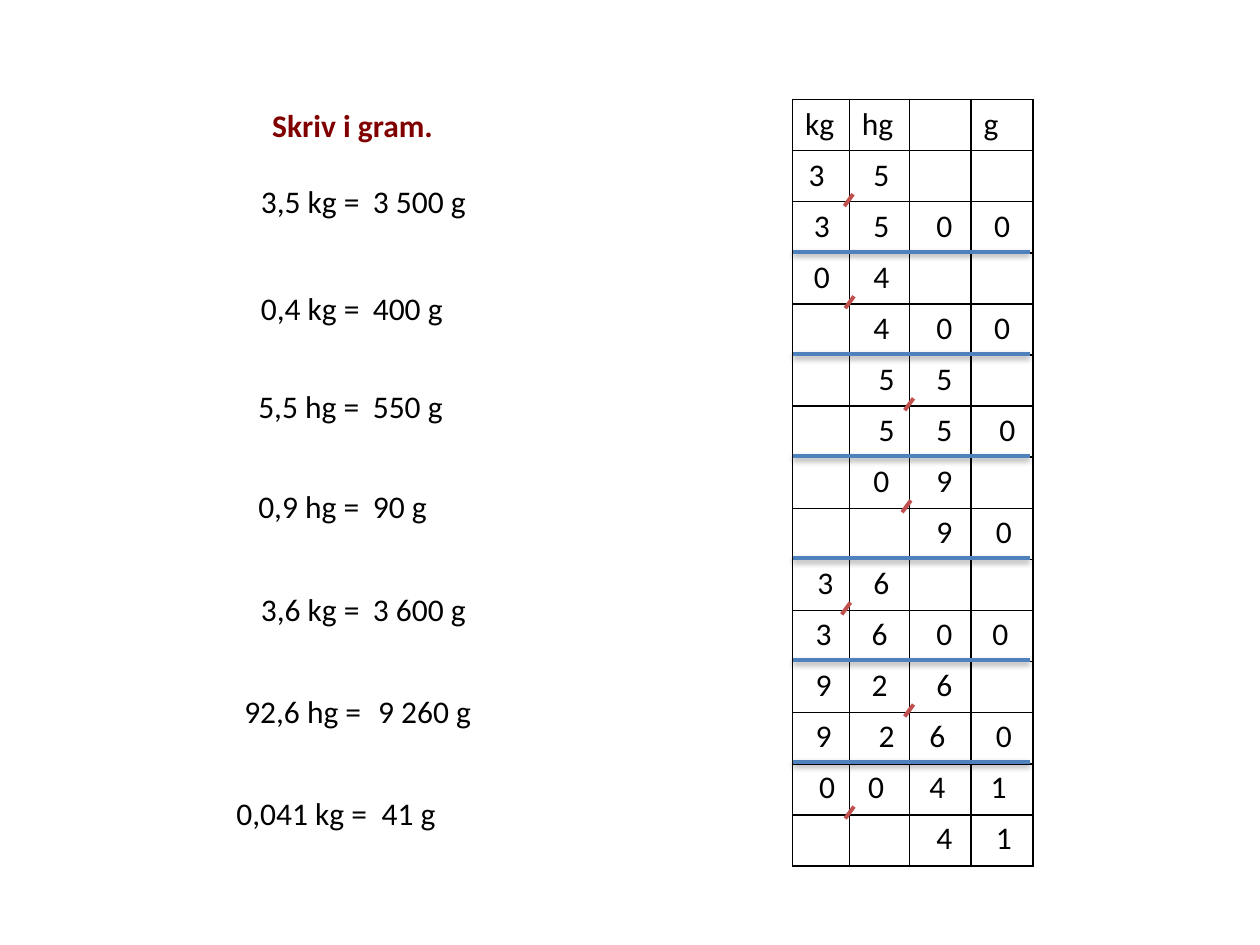
from dataclasses import dataclass

from lxml.etree import SubElement
from pptx import Presentation
from pptx.dml.color import RGBColor
from pptx.enum.shapes import MSO_CONNECTOR
from pptx.enum.text import MSO_AUTO_SIZE
from pptx.oxml import parse_xml
from pptx.oxml.ns import nsdecls, qn
from pptx.slide import Slide
from pptx.util import Pt

BLACK = RGBColor(0x00, 0x00, 0x00)
WHITE = RGBColor(0xFF, 0xFF, 0xFF)
MAROON = RGBColor(0x80, 0x00, 0x00)
BLUE = RGBColor(0x4F, 0x81, 0xBD)
RED = RGBColor(0xC0, 0x50, 0x4D)

LEFT, TOP, ROW = 452.9, 56.9, 29.16
COLS = [32.4, 34.3, 35.3, 35.3]
HEADER = ["kg", "hg", "", "g"]

TASKS = [
    (100.2, "3,5 kg =", 142, 71, 206, "3 500 g", 68),
    (161.5, "0,4 kg =", 142, 71, 206, "400 g", 55),
    (217.5, "5,5 hg =", 140.5, 73, 206, "550 g", 55),
    (274.5, "0,9 hg =", 140.5, 73, 206, "90 g", 45),
    (333.5, "3,6 kg =", 142, 73, 206, "3 600 g", 68),
    (391.8, "92,6 hg =", 132.5, 82, 209, "9 260 g", 68),
    (450.2, "0,041 kg =", 128, 90, 211, "41 g", 45),
]
DIGITS = [
    ("35", [455, 492]),
    ("3500", [458, 492, 528, 561]),
    ("04", [458, 492]),
    ("400", [492, 528, 561]),
    ("55", [495, 528]),
    ("550", [495, 528, 564]),
    ("09", [492, 528]),
    ("90", [528, 562]),
    ("36", [460, 492]),
    ("3600", [459, 491, 528, 560]),
    ("926", [459, 491, 528]),
    ("9260", [459, 495, 524, 562]),
    ("0041", [461, 489, 524, 559]),
    ("41", [528, 562]),
]
COMMAS = [487.5, 488, 522, 520.5, 486, 522, 488]


@dataclass
class Sheet:
    """Draws worksheet elements on one slide in a shared text style."""
    s: Slide
    font: str = "Calibri"
    size: float = 18

    def style(self, p, text, color=BLACK, bold=False):
        r = p.add_run()
        r.text = text
        fmt = {"name": self.font, "size": Pt(self.size), "bold": bold}
        for key, value in fmt.items():
            setattr(r.font, key, value)
        r.font.color.rgb = color

    def text(self, x, y, w, text, wrap=False, **look):
        sp = self.s.shapes.add_textbox(Pt(x), Pt(y), Pt(w), Pt(29.1))
        tf = sp.text_frame
        fmt = {"word_wrap": wrap, "auto_size": MSO_AUTO_SIZE.SHAPE_TO_FIT_TEXT}
        for key, value in fmt.items():
            setattr(tf, key, value)
        self.style(tf.paragraphs[0], text, **look)

    def line(self, x1, y1, x2, y2, color, width, shadow=False):
        ends = [Pt(v) for v in (x1, y1, x2, y2)]
        ln = self.s.shapes.add_connector(MSO_CONNECTOR.STRAIGHT, *ends)
        ln.line.color.rgb = color
        ln.line.width = Pt(width)
        effects = SubElement(ln._element.spPr, qn("a:effectLst"))
        if shadow:
            effects.append(parse_xml(
                f'<a:outerShdw {nsdecls("a")} blurRad="40000" dist="20000" '
                'dir="5400000" rotWithShape="0"><a:srgbClr val="000000">'
                '<a:alpha val="38000"/></a:srgbClr></a:outerShdw>'))

    def border(self, cell):
        tc_pr = cell._tc.get_or_add_tcPr()
        for side in ("lnL", "lnR", "lnT", "lnB"):
            tc_pr.append(parse_xml(
                f'<a:{side} {nsdecls("a")} w="12700"><a:solidFill>'
                f'<a:srgbClr val="{BLACK}"/></a:solidFill></a:{side}>'))

    def table(self, x, y, cols, rows, height, header):
        frame = self.s.shapes.add_table(rows, len(cols), Pt(x), Pt(y),
                                        Pt(sum(cols)), Pt(rows * height))
        tbl = frame.table
        for flag in ("first_row", "horz_banding"):
            setattr(tbl, flag, False)
        for col, width in zip(tbl.columns, cols):
            col.width = Pt(width)
        for row in tbl.rows:
            row.height = Pt(height)
        for cell in tbl.iter_cells():
            self.border(cell)
            cell.fill.solid()
            cell.fill.fore_color.rgb = WHITE
        for cell, label in zip(tbl.rows[0].cells, header):
            if label:
                self.style(cell.text_frame.paragraphs[0], label)


def main():
    prs = Presentation()
    prs.slide_width, prs.slide_height = Pt(720), Pt(540)
    sheet = Sheet(prs.slides.add_slide(prs.slide_layouts[6]))

    sheet.table(LEFT, TOP, COLS, len(DIGITS) + 1, ROW, HEADER)
    for i in range(1, len(COMMAS)):
        y = TOP + ROW * (2 * i + 1) - 0.4
        sheet.line(LEFT, y, LEFT + 135.5, y, BLUE, 2, shadow=True)
    for i, x in enumerate(COMMAS):
        y = 111 + 2 * ROW * i
        sheet.line(x, y, x - 5, y + 6.8, RED, 2.25)
    for i, (number, lefts) in enumerate(DIGITS):
        for digit, x in zip(number, lefts):
            sheet.text(x, 85 + ROW * i, 21, digit, wrap=True)

    sheet.text(148.5, TOP, 108, "Skriv i gram.", color=MAROON, bold=True)
    for y, task, x, width, answer_x, answer, answer_width in TASKS:
        sheet.text(x, y, width, task)
        sheet.text(answer_x, y, answer_width, answer)

    prs.save("out.pptx")


if __name__ == "__main__":
    main()
